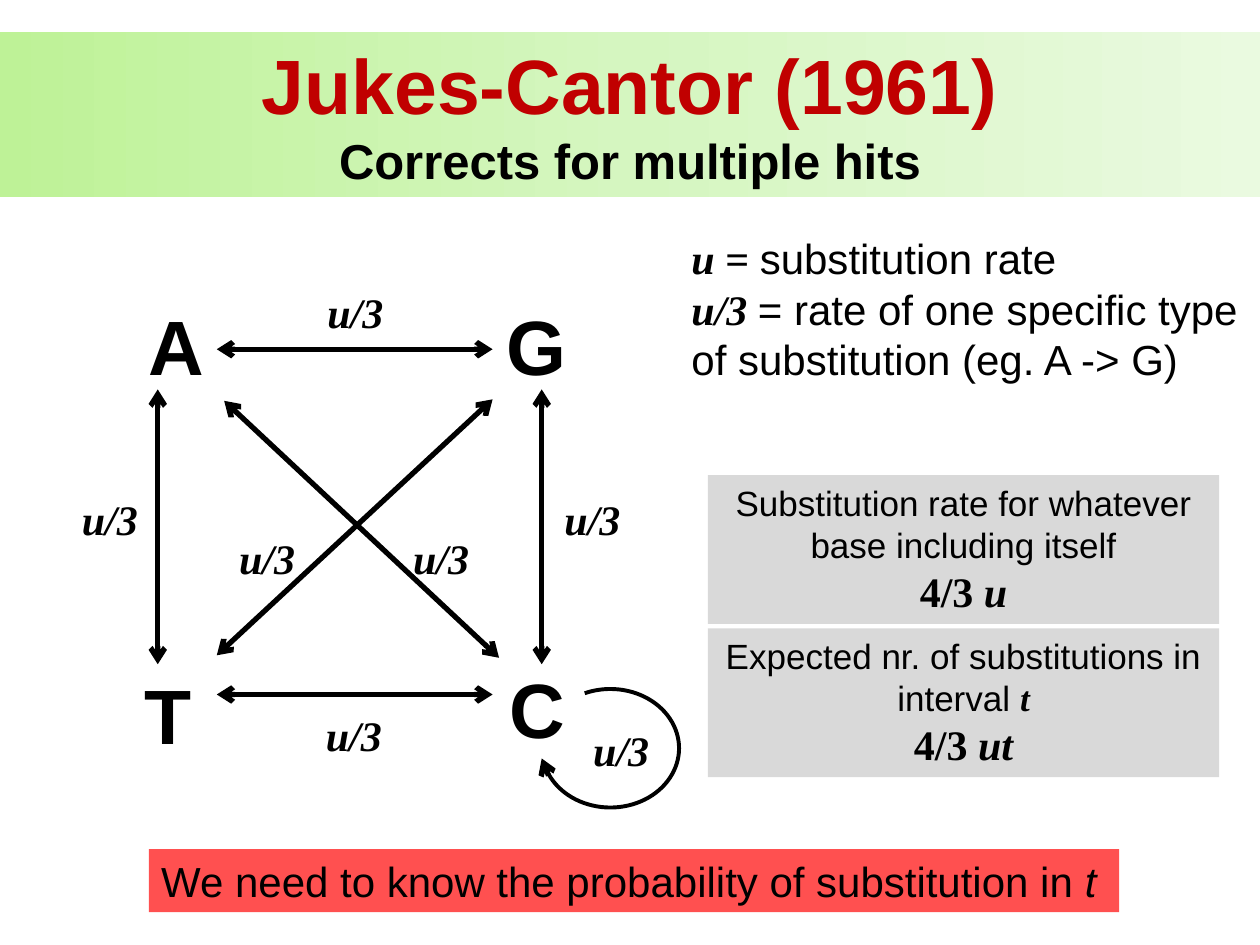
"""Build the Jukes-Cantor substitution model slide."""
from copy import deepcopy

from lxml import etree
from pptx import Presentation
from pptx.dml.color import RGBColor
from pptx.enum.shapes import MSO_CONNECTOR, MSO_SHAPE
from pptx.enum.text import MSO_ANCHOR, MSO_AUTO_SIZE, PP_ALIGN
from pptx.oxml.ns import qn
from pptx.util import Cm, Pt

RECT, ARC, STRAIGHT = MSO_SHAPE.RECTANGLE, MSO_SHAPE.ARC, MSO_CONNECTOR.STRAIGHT
LEFT, CENTER = PP_ALIGN.LEFT, PP_ALIGN.CENTER
TOP, GROW = MSO_ANCHOR.TOP, MSO_AUTO_SIZE.SHAPE_TO_FIT_TEXT
COLORS = {"text": "000000", "title": "C00000", "panel": "D9D9D9", "banner": "FF5050",
          "grad_start": "BEF297", "grad_mid": "D5F6C0", "grad_end": "EAFAE0"}
RGB = {name: RGBColor.from_string(value) for name, value in COLORS.items()}

BASE = {"name": "Arial", "size": Pt(44), "bold": True}
TITLE = {**BASE, "color": "title"}
SUBTITLE = {**BASE, "size": Pt(28)}
BODY = {"name": "Arial", "size": Pt(24)}
BODY_ITALIC = {**BODY, "italic": True}
SMALL = {"name": "Arial", "size": Pt(20)}
MATH = {"name": "Times New Roman", "size": Pt(24), "bold": True}
VAR = {**MATH, "italic": True}
SMALL_VAR = {**VAR, "size": Pt(20)}
BREAK = ("\n", {})


def write(sp, paragraphs, align=LEFT, wrap=True):
    tf = sp.text_frame
    for key, value in {"word_wrap": wrap, "auto_size": GROW, "vertical_anchor": TOP}.items():
        setattr(tf, key, value)
    for i, runs in enumerate(paragraphs):
        p = tf.add_paragraph() if i else tf.paragraphs[0]
        p.alignment = align
        for text, fmt in runs:
            if text == "\n":
                p.add_line_break()
                continue
            r = p.add_run()
            r.text = text
            for key, value in fmt.items():
                if key != "color":
                    setattr(r.font, key, value)
            r.font.color.rgb = RGB[fmt.get("color", "text")]


def add_arrow(s, x1, y1, x2, y2, ends):
    c = s.shapes.add_connector(STRAIGHT, Cm(x1), Cm(y1), Cm(x2), Cm(y2))
    c.line.color.rgb = RGB["text"]
    c.line.width = Pt(3)
    ln = c.line._get_or_add_ln()
    for end in ends:
        etree.SubElement(ln, qn(f"a:{end}"), type="arrow")
    etree.SubElement(c._element.spPr, qn("a:effectLst"))


prs = Presentation()
prs.slide_width, prs.slide_height = Cm(25.4), Cm(19.05)
s = prs.slides.add_slide(prs.slide_layouts[6])

for base, x, y in [("A", 2.74, 5.89), ("G", 9.96, 5.89), ("C", 10.03, 13.21), ("T", 2.67, 13.34)]:
    write(s.shapes.add_textbox(Cm(x), Cm(y), Cm(1.78), Cm(2.13)), [[(base, BASE)]])

arrows = [(4.37, y, 9.93, y) for y in (7.04, 14)]
arrows += [(x, 7.85, x, 13.39) for x in (3.18, 10.92)]
arrows += [(4.52, 8.08, 10.06, 13.26), (9.93, 8.05, 4.37, 13.21)]
for ends in arrows:
    add_arrow(s, *ends, ("headEnd", "tailEnd"))

sp = s.shapes.add_shape(ARC, Cm(10.92), Cm(13.89), Cm(2.77), Cm(2.39))
sp.shadow.inherit = False
sp.fill.background()
sp.line.color.rgb = RGB["text"]
sp.line.width = Pt(2.25)
sp.adjustments[0], sp.adjustments[1] = 147, 97.8
add_arrow(s, 11, 15.49, 10.92, 15.29, ("tailEnd",))

for x, y in [(6.32, 14.17), (11.13, 9.83), (1.4, 9.83), (6.35, 5.66),
             (8.08, 10.62), (4.57, 10.62), (11.71, 14.48)]:
    sp = s.shapes.add_textbox(Cm(x), Cm(y), Cm(1.65), Cm(1.27))
    write(sp, [[("u/3", VAR)]], wrap=False)

sp = s.shapes.add_textbox(Cm(13.69), Cm(4.57), Cm(11.71), Cm(3.33))
write(sp, [[("u ", VAR), ("= ", MATH), ("substitution rate", BODY)],
           [("u/3 ", VAR), ("= rate of one specific type of substitution (eg. A -> G)", BODY)]])

rate = [("Substitution rate for whatever base including itself", SMALL), BREAK,
        ("4/3 ", MATH), ("u", VAR)]
expected = [("Expected nr. of substitutions in interval ", SMALL), ("t", SMALL_VAR), BREAK,
            ("4/3 ", MATH), ("ut", VAR)]
title = [[("Jukes-Cantor (1961)", TITLE)], [("Corrects for multiple hits", SUBTITLE)]]
banner = [("We need to know the probability of substitution in ", BODY), ("t", BODY_ITALIC)]
for box, fill, paragraphs, align, wrap in [
    ((14.27, 9.58, 10.31, 3), "panel", [rate], CENTER, True),
    ((14.27, 12.67, 10.31, 3), "panel", [expected], CENTER, True),
    ((0, 0.64, 25.4, 3.33), None, title, CENTER, True),
    ((3, 17.12, 19.56, 1.27), "banner", [banner], LEFT, False),
]:
    sp = s.shapes.add_shape(RECT, *map(Cm, box))
    sp.shadow.inherit = False
    sp.line.fill.background()
    write(sp, paragraphs, align, wrap)
    if fill:
        sp.fill.solid()
        sp.fill.fore_color.rgb = RGB[fill]
    else:
        sp.fill.gradient()
        sp.fill.gradient_angle = 0
        stops = sp._element.spPr.find(".//" + qn("a:gsLst"))
        stops.insert(1, deepcopy(stops[0]))
        for i, name in enumerate(("grad_start", "grad_mid", "grad_end")):
            stop = sp.fill.gradient_stops[i]
            stop.position = i / 2
            stop.color.rgb = RGB[name]

prs.save("out.pptx")
